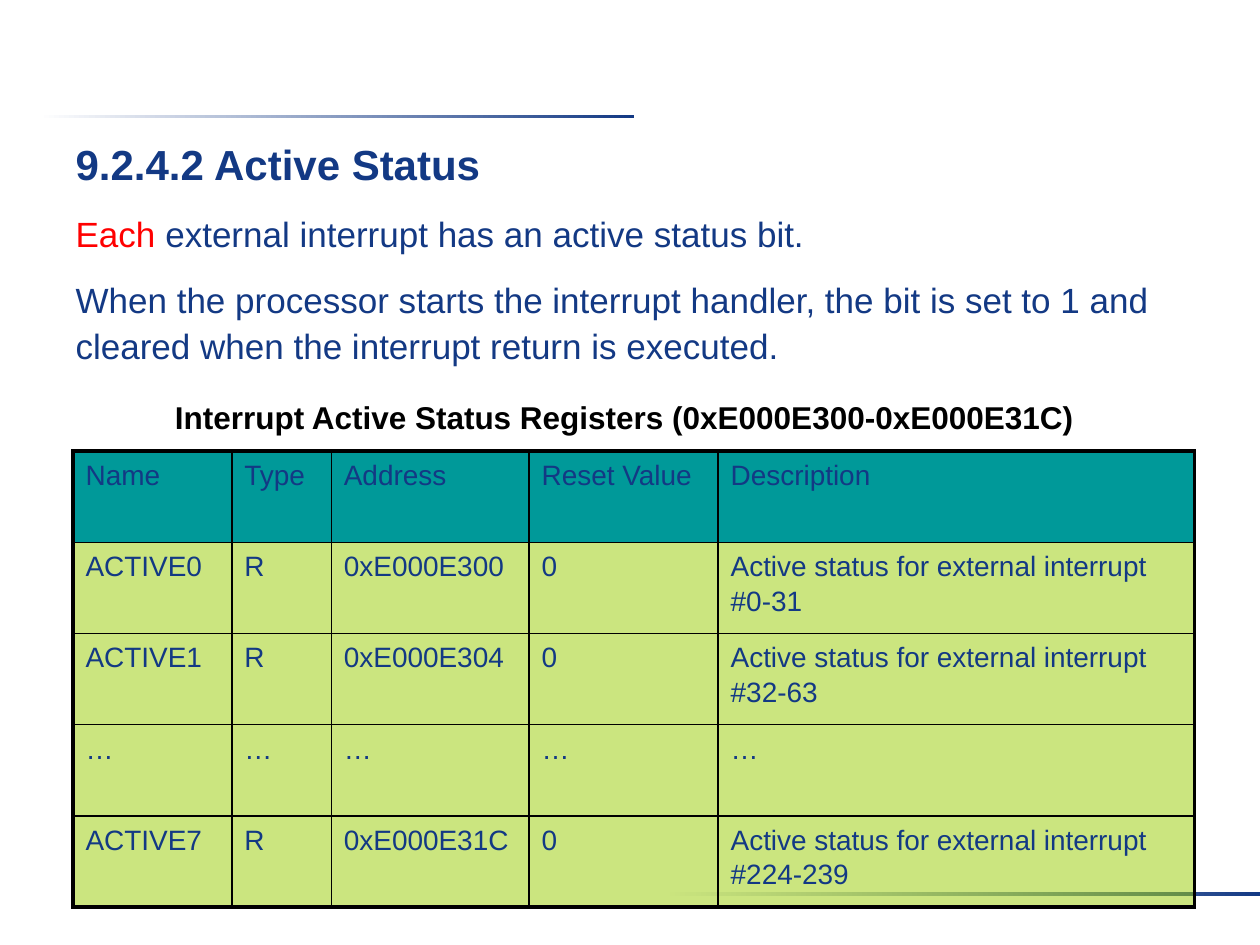
from dataclasses import dataclass

from lxml.etree import SubElement
from pptx import Presentation
from pptx.dml.color import RGBColor
from pptx.enum.shapes import MSO_SHAPE
from pptx.enum.text import MSO_ANCHOR, MSO_AUTO_SIZE, PP_ALIGN
from pptx.oxml.ns import qn
from pptx.util import Inches, Pt


@dataclass(frozen=True)
class Theme:
    font: str = "Arial"
    navy: str = "133984"
    red: str = "FF0000"
    black: str = "000000"
    white: str = "FFFFFF"
    teal: str = "009999"
    lime: str = "99CC00"
    lime_opacity: int = 50
    heading_size: int = 24
    body_size: int = 20
    caption_size: int = 18
    table_size: int = 16
    line_spacing: float = 1.1
    paragraph_gap: int = 11
    outer_border: float = 2.25
    inner_border: float = 1


THEME = Theme()

BODY = [
    [("9.2.4.2 Active Status", THEME.navy)],
    [("Each ", THEME.red), ("external interrupt has an active status bit.", THEME.navy)],
    [("When the processor starts the interrupt handler, the bit is set to 1 and "
      "cleared when the interrupt return is executed.", THEME.navy)],
]
CAPTION = "Interrupt Active Status Registers (0xE000E300-0xE000E31C)"
DESCRIPTION = "Active status for external interrupt #"
REGISTERS = [
    ["Name", "Type", "Address", "Reset Value", "Description"],
    ["ACTIVE0", "R", "0xE000E300", "0", DESCRIPTION + "0-31"],
    ["ACTIVE1", "R", "0xE000E304", "0", DESCRIPTION + "32-63"],
    ["…"] * 5,
    ["ACTIVE7", "R", "0xE000E31C", "0", DESCRIPTION + "224-239"],
]
COLUMN_WIDTHS = [1.26, 0.79, 1.57, 1.5, 3.78]


def inches(box):
    return [Inches(length) for length in box]


def style_font(font, size, color, bold=False):
    font.name = THEME.font
    font.size = Pt(size)
    font.bold = bold
    font.color.rgb = RGBColor.from_string(color)


def add_gradient_bar(slide, box):
    bar = slide.shapes.add_shape(MSO_SHAPE.RECTANGLE, *inches(box))
    bar.shadow.inherit = False
    bar.line.fill.background()
    bar.fill.gradient()
    bar.fill.gradient_angle = 0
    for stop, color, position in zip(bar.fill.gradient_stops, (THEME.white, THEME.navy), (0, 1)):
        stop.color.rgb = RGBColor.from_string(color)
        stop.position = position


def fill_body(placeholder, box):
    placeholder.left, placeholder.top, placeholder.width, placeholder.height = inches(box)
    frame = placeholder.text_frame
    frame.auto_size = MSO_AUTO_SIZE.NONE
    frame.vertical_anchor = MSO_ANCHOR.MIDDLE
    for index, pieces in enumerate(BODY):
        paragraph = frame.paragraphs[0] if index == 0 else frame.add_paragraph()
        properties = paragraph._p.get_or_add_pPr()
        properties.set("marL", "0")
        properties.set("indent", "0")
        SubElement(properties, qn("a:buNone"))
        paragraph.line_spacing = THEME.line_spacing
        paragraph.space_before = Pt(THEME.paragraph_gap if index else 0)
        size = THEME.body_size if index else THEME.heading_size
        for text, color in pieces:
            run = paragraph.add_run()
            run.text = text
            style_font(run.font, size, color, bold=index == 0)


def add_caption(slide, box):
    frame = slide.shapes.add_textbox(*inches(box)).text_frame
    frame.word_wrap = False
    frame.text = CAPTION
    paragraph = frame.paragraphs[0]
    paragraph.alignment = PP_ALIGN.LEFT
    style_font(paragraph.runs[0].font, THEME.caption_size, THEME.black, bold=True)


def set_borders(cell, outer_sides):
    properties = cell._tc.get_or_add_tcPr()
    for side in "LRTB":
        width = THEME.outer_border if side in outer_sides else THEME.inner_border
        line = SubElement(properties, qn(f"a:ln{side}"), w=str(Pt(width)))
        SubElement(SubElement(line, qn("a:solidFill")), qn("a:srgbClr"), val=THEME.black)


def set_fill(cell, color, opacity=100):
    cell.fill.solid()
    cell.fill.fore_color.rgb = RGBColor.from_string(color)
    if opacity < 100:
        color_element = cell._tc.tcPr.find(qn("a:solidFill")).find(qn("a:srgbClr"))
        SubElement(color_element, qn("a:alpha"), val=str(opacity * 1000))


def add_register_table(slide, box):
    row_count, column_count = len(REGISTERS), len(COLUMN_WIDTHS)
    table = slide.shapes.add_table(row_count, column_count, *inches(box)).table
    table.horz_banding = False
    for column, width in zip(table.columns, COLUMN_WIDTHS):
        column.width = Inches(width)
    for row_index, values in enumerate(REGISTERS):
        table.rows[row_index].height = Inches(box[3] / row_count)
        for column_index, value in enumerate(values):
            cell = table.cell(row_index, column_index)
            edges = {"L": column_index == 0, "R": column_index == column_count - 1,
                     "T": row_index == 0, "B": row_index == row_count - 1}
            set_borders(cell, [side for side, outer in edges.items() if outer])
            if row_index == 0:
                set_fill(cell, THEME.teal)
            else:
                set_fill(cell, THEME.lime, THEME.lime_opacity)
            cell.text_frame.text = value
            paragraph = cell.text_frame.paragraphs[0]
            paragraph.line_spacing = THEME.line_spacing
            style_font(paragraph.runs[0].font, THEME.table_size, THEME.navy)


def main():
    presentation = Presentation()
    presentation.slide_width, presentation.slide_height = Inches(10), Inches(7.5)
    slide = presentation.slides.add_slide(presentation.slide_layouts[1])
    title = slide.shapes.title._element
    title.getparent().remove(title)

    add_gradient_bar(slide, (0.31, 0.91, 4.72, 0.03))
    add_gradient_bar(slide, (5.28, 7.08, 4.72, 0.03))
    fill_body(slide.placeholders[1], (0.5, 1, 9, 1.97))
    add_caption(slide, (1.29, 3.11, 7.34, 0.4))
    add_register_table(slide, (0.58, 3.58, sum(COLUMN_WIDTHS), 3.62))
    presentation.save("out.pptx")


if __name__ == "__main__":
    main()
